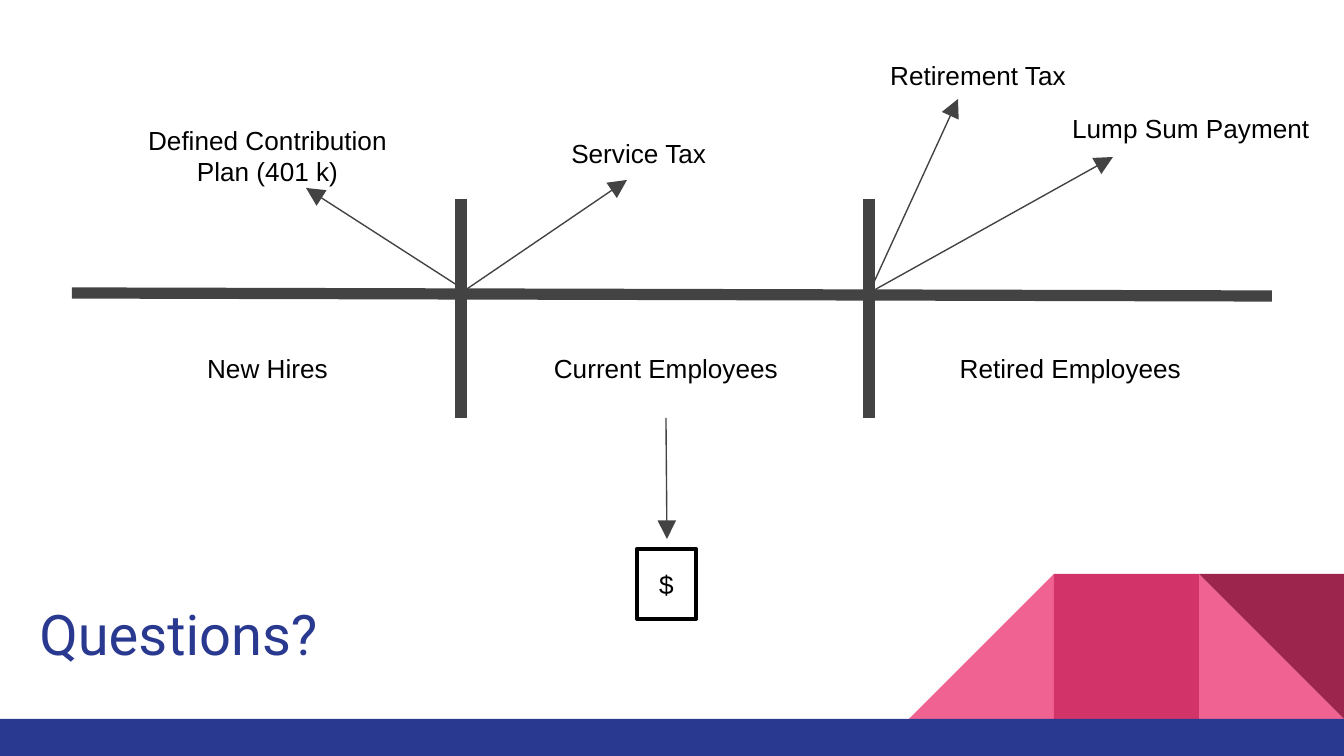
from dataclasses import dataclass

from lxml.etree import SubElement
from pptx import Presentation
from pptx.dml.color import RGBColor
from pptx.enum.shapes import MSO_CONNECTOR, MSO_SHAPE
from pptx.enum.text import MSO_ANCHOR, MSO_AUTO_SIZE, PP_ALIGN
from pptx.oxml.ns import qn
from pptx.util import Emu, Inches, Pt

EMU_PER_PIXEL = 914400 / 134.4
WIDTH, HEIGHT = 1344, 756


@dataclass(frozen=True)
class Theme:
    navy: str = "2A3990"
    pink: str = "F06292"
    rose: str = "D23369"
    wine: str = "9C254D"
    gray: str = "434343"
    black: str = "000000"
    title_font: str = "Roboto"
    body_font: str = "Arial"
    title_size: int = 30
    body_size: int = 14
    axis_width: float = 6
    arrow_width: float = 0.75
    box_width: float = 2.25


THEME = Theme()


def px(*lengths):
    return [Emu(round(length * EMU_PER_PIXEL)) for length in lengths]


def rgb(color):
    return RGBColor.from_string(color)


def format_text(frame, text, size, font, color, align, anchor):
    frame.text = text
    frame.word_wrap = True
    frame.auto_size = MSO_AUTO_SIZE.NONE
    frame.vertical_anchor = anchor
    frame.margin_left = frame.margin_right = Inches(0.1)
    frame.margin_top = frame.margin_bottom = Inches(0.1)
    paragraph = frame.paragraphs[0]
    paragraph.alignment = align
    paragraph.font.size = Pt(size)
    paragraph.font.name = font
    paragraph.font.color.rgb = rgb(color)


def format_body(frame, text, align, anchor=MSO_ANCHOR.TOP):
    format_text(frame, text, THEME.body_size, THEME.body_font, THEME.black,
                align, anchor)


def add_label(slide, text, box, align=PP_ALIGN.LEFT):
    label = slide.shapes.add_textbox(*px(*box))
    format_body(label.text_frame, text, align)


def add_block(slide, preset, box, color):
    block = slide.shapes.add_shape(preset, *px(*box))
    block.shadow.inherit = False
    block.fill.solid()
    block.fill.fore_color.rgb = rgb(color)
    block.line.fill.background()
    return block


def add_line(slide, start, end, width, arrow=False):
    line = slide.shapes.add_connector(MSO_CONNECTOR.STRAIGHT,
                                      *px(*start, *end))
    line.line.color.rgb = rgb(THEME.gray)
    line.line.width = Pt(width)
    if arrow:
        SubElement(line.line._get_or_add_ln(), qn("a:tailEnd"),
                   type="triangle", w="lg", len="lg")
    SubElement(line._element.spPr, qn("a:effectLst"))


def add_decoration(slide):
    side, floor = 145, 719
    top = floor - side
    left, middle, right = (WIDTH - side * count for count in (3, 2, 1))
    triangle = MSO_SHAPE.RIGHT_TRIANGLE
    add_block(slide, triangle, (right, top, side, side), THEME.pink)
    slope = add_block(slide, triangle, (left, top, side, side), THEME.pink)
    slope._element.spPr.get_or_add_xfrm().set("flipH", "1")
    add_block(slide, MSO_SHAPE.RECTANGLE, (middle, top, side, side), THEME.rose)
    corner = add_block(slide, triangle, (right, top, side, side), THEME.wine)
    corner.rotation = 180
    add_block(slide, MSO_SHAPE.RECTANGLE,
              (0, floor, WIDTH, HEIGHT - floor), THEME.navy)


def add_timeline(slide):
    # Axis and its two dividers
    add_line(slide, (72, 293), (1272, 296), THEME.axis_width)
    for divider in (461, 869):
        add_line(slide, (divider, 199), (divider, 418), THEME.axis_width)

    # Employee groups between the dividers
    edges = (72, 463, 869, 1272)
    groups = ("New Hires", "Current Employees", "Retired Employees")
    for group, left, right in zip(groups, edges, edges[1:]):
        add_label(slide, group, (left, 339, right - left, 79),
                  PP_ALIGN.CENTER)


def add_benefits(slide):
    # Arrows from the timeline to each benefit and to the money box
    arrows = (
        ((463, 289), (306, 188)),
        ((461, 293), (627, 180)),
        ((869, 293), (958, 99)),
        ((869, 293), (1113, 157)),
        ((666, 418), (667, 539)),
    )
    for start, end in arrows:
        add_line(slide, start, end, THEME.arrow_width, arrow=True)

    # Benefit names
    add_label(slide, "Defined Contribution Plan (401 k)",
              (117, 111, 301, 46), PP_ALIGN.CENTER)
    add_label(slide, "Service Tax", (558, 124, 210, 46))
    add_label(slide, "Retirement Tax", (877, 46, 210, 46))
    add_label(slide, "Lump Sum Payment", (1059, 99, 274, 46))


def add_money_box(slide):
    money = slide.shapes.add_shape(MSO_SHAPE.RECTANGLE, *px(637, 549, 59, 70))
    money.shadow.inherit = False
    money.fill.background()
    money.line.color.rgb = rgb(THEME.black)
    money.line.width = Pt(THEME.box_width)
    format_body(money.text_frame, "$", PP_ALIGN.CENTER, MSO_ANCHOR.MIDDLE)


def set_title(slide, text):
    title = slide.shapes.title
    title.left, title.top, title.width, title.height = px(26, 586, 485, 95)
    format_text(title.text_frame, text, THEME.title_size, THEME.title_font,
                THEME.navy, PP_ALIGN.LEFT, MSO_ANCHOR.MIDDLE)


def main():
    presentation = Presentation()
    presentation.slide_width, presentation.slide_height = px(WIDTH, HEIGHT)
    slide = presentation.slides.add_slide(presentation.slide_layouts[5])
    add_decoration(slide)
    add_timeline(slide)
    add_benefits(slide)
    add_money_box(slide)
    set_title(slide, "Questions?")
    presentation.save("out.pptx")


main()
